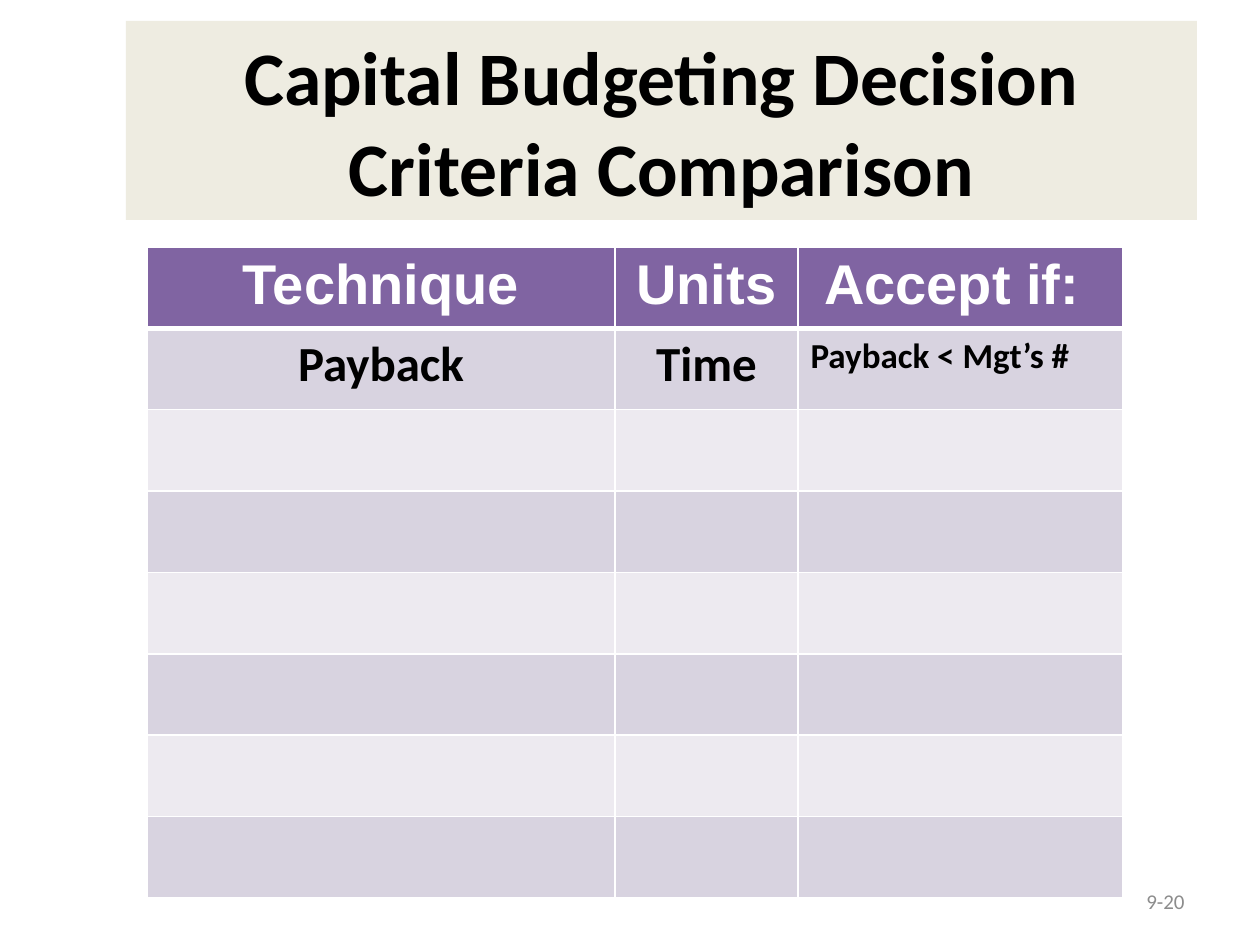
import dataclasses

import lxml.etree
import pptx
import pptx.dml.color
import pptx.enum.shapes
import pptx.enum.text
import pptx.oxml.ns
import pptx.util

EMU_PER_PX = 914400 // 126
ALIGN = pptx.enum.text.PP_ALIGN
MIDDLE = pptx.enum.text.MSO_ANCHOR.MIDDLE


@dataclasses.dataclass(frozen=True)
class Theme:
    body_font: str = "Calibri"
    header_font: str = "Arial"
    ink: str = "000000"
    white: str = "FFFFFF"
    muted: str = "8C8C8C"
    title_fill: str = "EEECE1"
    header_fill: str = "8064A2"
    bands: tuple = ("D8D3E0", "EDEAF0")
    title_size: float = 43.2
    header_size: int = 32
    cell_size: int = 28
    rule_size: int = 20
    number_size: int = 12
    thin_line: int = 1
    thick_line: int = 3


def px(length):
    return pptx.util.Emu(length * EMU_PER_PX)


def rgb(color):
    return pptx.dml.color.RGBColor.from_string(color)


def write(frame, text, *, font, size, color, bold=False, align=ALIGN.CENTER):
    para = frame.paragraphs[0]
    para.alignment = align
    span = para.add_run()
    span.text = text
    span.font.name = font
    span.font.size = pptx.util.Pt(size)
    span.font.bold = bold
    span.font.color.rgb = rgb(color)


def add_borders(cell, color, widths):
    """Draw cell edges; widths gives points for the sides L, R, T and B."""
    properties = cell._tc.get_or_add_tcPr()
    for side, width in widths.items():
        line = lxml.etree.SubElement(
            properties, pptx.oxml.ns.qn(f"a:ln{side}"), w=str(pptx.util.Pt(width)))
        fill = lxml.etree.SubElement(line, pptx.oxml.ns.qn("a:solidFill"))
        lxml.etree.SubElement(fill, pptx.oxml.ns.qn("a:srgbClr"), val=color)


class PageBuilder:
    def __init__(self, page, theme):
        self.page = page
        self.theme = theme

    def title(self, text, *area):
        box = self.page.shapes.add_shape(
            pptx.enum.shapes.MSO_SHAPE.RECTANGLE, *map(px, area))
        box.shadow.inherit = False
        box.fill.solid()
        box.fill.fore_color.rgb = rgb(self.theme.title_fill)
        box.line.fill.background()
        box.text_frame.word_wrap = True
        box.text_frame.vertical_anchor = MIDDLE
        write(box.text_frame, text, font=self.theme.body_font,
              size=self.theme.title_size, color=self.theme.ink, bold=True)

    def page_number(self, text, *area):
        box = self.page.shapes.add_textbox(*map(px, area))
        box.text_frame.word_wrap = True
        box.text_frame.vertical_anchor = MIDDLE
        write(box.text_frame, text, font=self.theme.body_font,
              size=self.theme.number_size, color=self.theme.muted, align=ALIGN.RIGHT)

    def table(self, rows, row_count, column_widths, left, top, height):
        """Fill the first rows with text and leave the rest as blank bands."""
        table = self.page.shapes.add_table(
            row_count, len(column_widths), px(left), px(top),
            px(sum(column_widths)), px(height)).table
        for column, width in zip(table.columns, column_widths):
            column.width = px(width)
        for row_index in range(row_count):
            for column_index in range(len(column_widths)):
                cell = table.cell(row_index, column_index)
                self.style_cell(cell, row_index)
                if row_index < len(rows):
                    self.cell_text(cell, rows[row_index][column_index],
                                   row_index == 0,
                                   column_index == len(column_widths) - 1)

    def style_cell(self, cell, row_index):
        theme = self.theme
        thin, thick = theme.thin_line, theme.thick_line
        add_borders(cell, theme.white, {
            "L": thin, "R": thin,
            "T": thick if row_index == 1 else thin,
            "B": thick if row_index == 0 else thin})
        cell.fill.solid()
        cell.fill.fore_color.rgb = rgb(
            theme.bands[(row_index - 1) % 2] if row_index else theme.header_fill)

    def cell_text(self, cell, text, is_header, is_rule):
        theme = self.theme
        if is_header:
            font, size, color = theme.header_font, theme.header_size, theme.white
        else:
            font, color = theme.body_font, theme.ink
            size = theme.rule_size if is_rule else theme.cell_size
        write(cell.text_frame, text, font=font, size=size, color=color, bold=True,
              align=ALIGN.LEFT if is_rule else ALIGN.CENTER)


def main():
    deck = pptx.Presentation()
    deck.slide_width, deck.slide_height = px(1260), px(945)
    builder = PageBuilder(deck.slides.add_slide(deck.slide_layouts[6]), Theme())
    builder.title("Capital Budgeting Decision Criteria Comparison", 126, 21, 1071, 199)
    builder.page_number("9-20", 903, 876, 294, 50)
    builder.table(
        [("Technique", "Units", " Accept if:"),
         ("Payback", "Time", "Payback < Mgt’s #")],
        row_count=8, column_widths=(468, 183, 325), left=147, top=247, height=651)
    deck.save("out.pptx")


if __name__ == "__main__":
    main()
